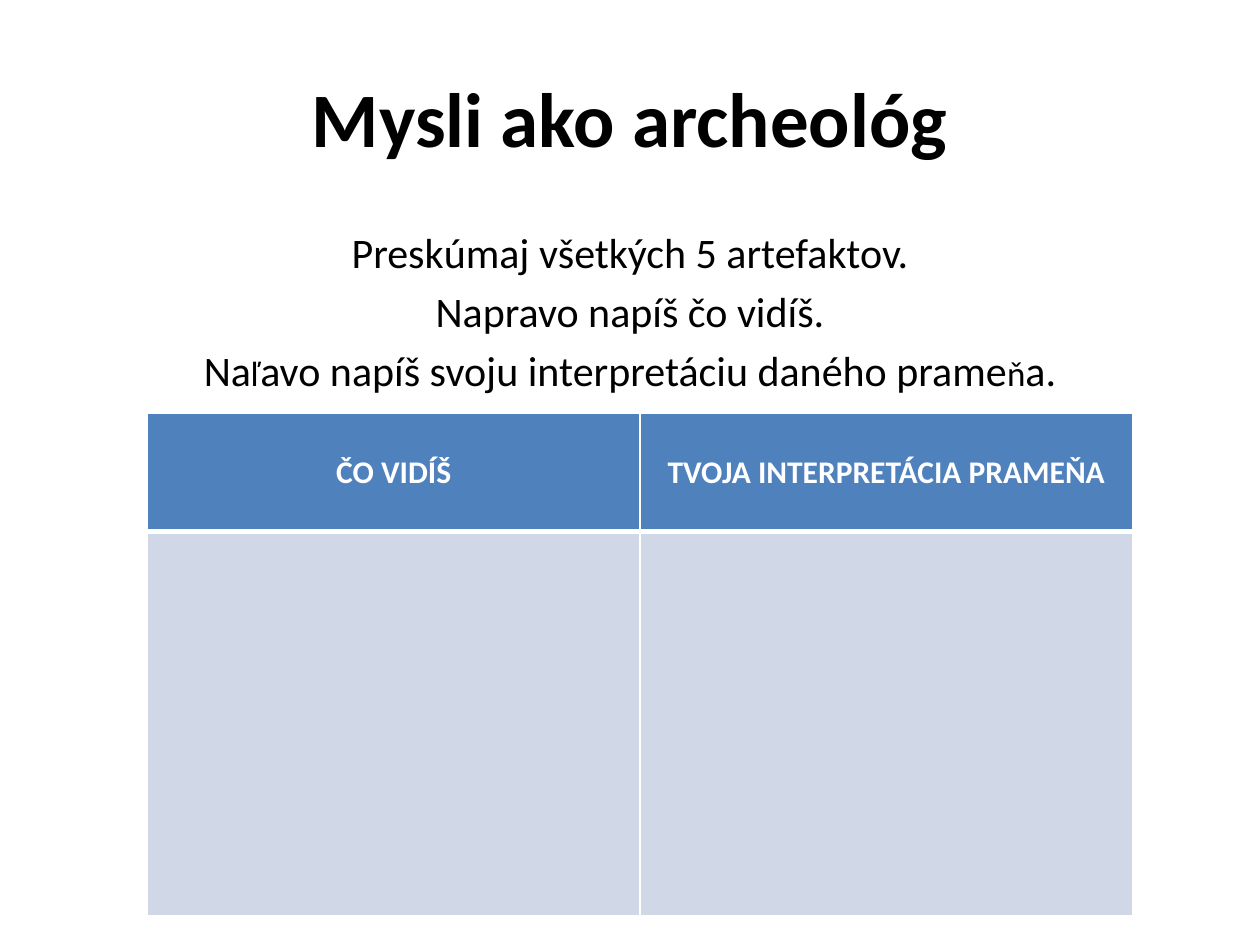
from lxml.etree import SubElement
from pptx import Presentation
from pptx.dml.color import RGBColor
from pptx.enum.text import MSO_ANCHOR, MSO_AUTO_SIZE, PP_ALIGN
from pptx.oxml.ns import qn
from pptx.util import Inches, Pt

TITLE = "Mysli ako archeológ"
# Each line is a list of (text, size) runs.
INSTRUCTIONS = [
    [("Preskúmaj všetkých 5 artefaktov.", 24)],
    [("Napravo napíš čo vidíš.", 24)],
    [("Na", 24), ("ľ", 20), ("avo napíš svoju interpretáciu daného prame", 24),
     ("ň", 20), ("a.", 24)],
]
HEADERS = ["ČO VIDÍŠ", "TVOJA INTERPRETÁCIA PRAMEŇA"]
ROWS = [(0.94, "4F81BD", 3), (3.05, "D0D8E8", 1)]  # height, fill, bottom border
COL_WIDTH = 3.91
FONT = "Calibri"


def rgb(value):
    return RGBColor.from_string(value)


def format_run(r, size, color="000000", bold=False):
    r.font.name = FONT
    r.font.size = Pt(size)
    r.font.bold = bold
    r.font.color.rgb = rgb(color)


def place(sp, left, top, width, height):
    sp.left, sp.top = Inches(left), Inches(top)
    sp.width, sp.height = Inches(width), Inches(height)


def format_cell(cell, fill, widths):
    """Fill a cell and give it white borders; widths maps border tag to points."""
    tc_pr = cell._tc.get_or_add_tcPr()
    for tag, width in widths.items():
        line = SubElement(tc_pr, qn(f"a:{tag}"), w=str(Pt(width)))
        solid = SubElement(line, qn("a:solidFill"))
        SubElement(solid, qn("a:srgbClr"), val="FFFFFF")
    cell.fill.solid()
    cell.fill.fore_color.rgb = rgb(fill)
    cell.vertical_anchor = MSO_ANCHOR.MIDDLE


prs = Presentation()
prs.slide_width, prs.slide_height = Inches(10), Inches(7.5)
s = prs.slides.add_slide(prs.slide_layouts[1])

title = s.shapes.title
place(title, 0.5, 0.3, 9, 1.25)
title.text_frame.text = TITLE
p = title.text_frame.paragraphs[0]
p.alignment = PP_ALIGN.CENTER
format_run(p.runs[0], 44, bold=True)

body = s.placeholders[1]
place(body, 0.5, 1.75, 9, 4.95)
tf = body.text_frame
tf.auto_size = MSO_AUTO_SIZE.NONE
for i, line in enumerate(INSTRUCTIONS):
    p = tf.add_paragraph() if i else tf.paragraphs[0]
    p.alignment = PP_ALIGN.CENTER
    SubElement(p._p.get_or_add_pPr(), qn("a:buNone"))
    for text, size in line:
        r = p.add_run()
        r.text = text
        format_run(r, size)

table = s.shapes.add_table(
    len(ROWS), len(HEADERS), Inches(1.17), Inches(3.28),
    Inches(COL_WIDTH * len(HEADERS)), Inches(sum(row[0] for row in ROWS))).table
for col in table.columns:
    col.width = Inches(COL_WIDTH)
top = 1
for i, (height, fill, bottom) in enumerate(ROWS):
    table.rows[i].height = Inches(height)
    for cell in table.rows[i].cells:
        format_cell(cell, fill, {"lnL": 1, "lnR": 1, "lnT": top, "lnB": bottom})
    top = bottom
for cell, text in zip(table.rows[0].cells, HEADERS):
    cell.text_frame.text = text
    p = cell.text_frame.paragraphs[0]
    p.alignment = PP_ALIGN.CENTER
    format_run(p.runs[0], 18, "FFFFFF", bold=True)

prs.save("out.pptx")
